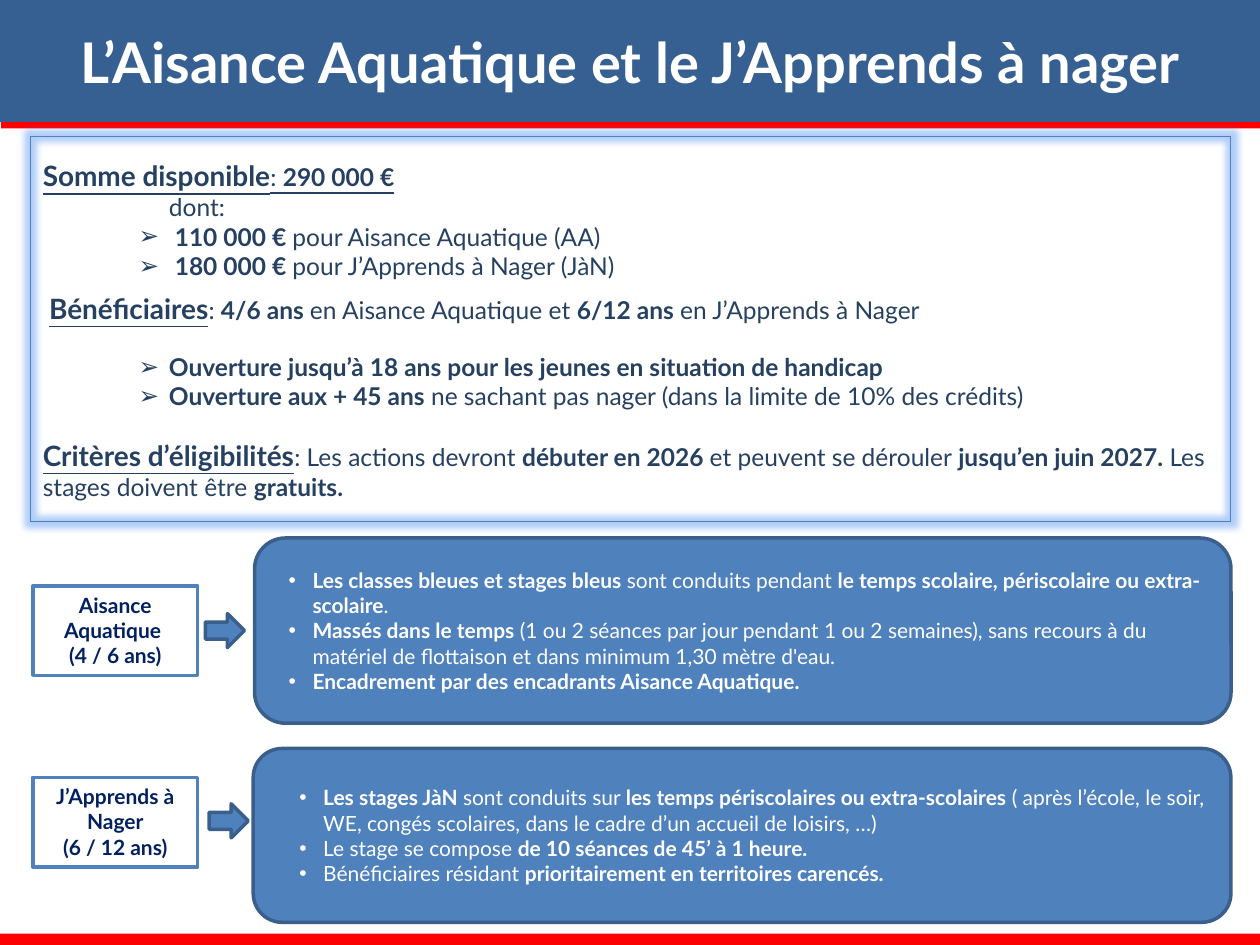
from lxml import etree
from pptx import Presentation
from pptx.dml.color import RGBColor
from pptx.enum.shapes import MSO_SHAPE
from pptx.enum.text import MSO_ANCHOR, MSO_AUTO_SIZE, PP_ALIGN
from pptx.oxml.ns import qn
from pptx.util import Inches, Pt

RECT, ROUND, ARROW = MSO_SHAPE.RECTANGLE, MSO_SHAPE.ROUNDED_RECTANGLE, MSO_SHAPE.RIGHT_ARROW
TOP, MIDDLE = MSO_ANCHOR.TOP, MSO_ANCHOR.MIDDLE
LEFT, CENTER = PP_ALIGN.LEFT, PP_ALIGN.CENTER
NO_FIT = MSO_AUTO_SIZE.NONE

FONT = "Lato"
WHITE, RED, BLUE, EDGE = "FFFFFF", "FF0000", "4F81BD", "3A5F8B"
BANNER, INK, NAVY, GLOW = "376092", "254061", "002060", "3A82EE"


def rgb(value):
    return RGBColor.from_string(value)


def add_xml(parent, tag, **attributes):
    return etree.SubElement(parent, qn(tag), **attributes)


class Deck:
    """Holds the style and the current slide."""

    def __init__(self):
        self.prs = Presentation()
        self.prs.slide_width, self.prs.slide_height = Inches(10), Inches(7.5)
        self.s = self.prs.slides.add_slide(self.prs.slide_layouts[1])

    def style(self, sp, fill=None, line=None, width=2):
        sp.shadow.inherit = False
        if fill:
            sp.fill.solid()
            sp.fill.fore_color.rgb = rgb(fill)
        else:
            sp.fill.background()
        if line:
            sp.line.color.rgb = rgb(line)
            sp.line.width = Pt(width)
        else:
            sp.line.fill.background()

    def shape(self, kind, x, y, w, h, fill, line=None):
        sp = self.s.shapes.add_shape(kind, Inches(x), Inches(y), Inches(w), Inches(h))
        self.style(sp, fill, line)
        return sp

    def placeholder(self, index, x, y, w, h):
        sp = self.s.placeholders[index]
        sp.left, sp.top, sp.width, sp.height = Inches(x), Inches(y), Inches(w), Inches(h)
        return sp

    def glow(self, sp, color, radius, alpha):
        effects = sp.element.spPr.find(qn("a:effectLst"))
        glow = add_xml(effects, "a:glow", rad=str(Pt(radius)))
        clr = add_xml(glow, "a:srgbClr", val=color)
        add_xml(clr, "a:alpha", val=str(alpha * 1000))

    def frame(self, sp, anchor=MIDDLE, top=0.05):
        tf = sp.text_frame
        tf.auto_size, tf.word_wrap, tf.vertical_anchor = NO_FIT, True, anchor
        tf.margin_left = tf.margin_right = Inches(0.1)
        tf.margin_top, tf.margin_bottom = Inches(top), Inches(0.05)
        return tf

    def paragraph(self, tf, text, size, color, head="", bullet=None, align=LEFT,
                  margin=0, hang=0, before=0, underline=False):
        """Add a paragraph; *stars* mark bold, head is a larger underlined start."""
        p = tf.paragraphs[0]
        if p.runs:
            p = tf.add_paragraph()
        pPr = p._p.get_or_add_pPr()
        pPr.set("marL", str(Inches(margin)))
        pPr.set("indent", str(Inches(-hang)))
        if bullet:
            add_xml(add_xml(pPr, "a:buClr"), "a:srgbClr", val=color)
            add_xml(pPr, "a:buFont", typeface="Arial")
            add_xml(pPr, "a:buChar", char=bullet)
        else:
            add_xml(pPr, "a:buNone")
        p.alignment, p.space_before = align, Pt(before)
        if head:
            self.run(p, head, size + 2, color, True, True)
        for i, part in enumerate(text.split("*")):
            if part:
                self.run(p, part, size, color, i % 2 == 1, underline)

    def run(self, p, text, size, color, bold, underline):
        r = p.add_run()
        r.text = text
        r.font.name, r.font.size, r.font.color.rgb = FONT, Pt(size), rgb(color)
        r.font.bold, r.font.underline = bold, underline

    def title(self, text):
        sp = self.placeholder(0, 0, 0, 10.01, 0.97)
        self.style(sp, BANNER)
        self.paragraph(self.frame(sp), f"*{text}*", 32, WHITE, align=CENTER)

    def summary(self, items):
        sp = self.placeholder(1, 0.24, 1.08, 9.53, 3.06)
        self.style(sp, line=BLUE, width=0)
        self.glow(sp, GLOW, 8, 40)
        # The glow lies over the red rule, so the box goes to the front
        sp.element.getparent().append(sp.element)
        tf = self.frame(sp, TOP, 0.18)
        for text, options in items:
            self.paragraph(tf, text, 14, INK, **options)

    def label(self, y, lines):
        tf = self.frame(self.shape(RECT, 0.26, y, 1.31, 0.71, WHITE, BLUE), TOP)
        for line in lines:
            self.paragraph(tf, f"*{line}*", 12, NAVY, align=CENTER)

    def arrow(self, x, y):
        self.shape(ARROW, x, y, 0.31, 0.27, BLUE, EDGE)

    def card(self, x, y, h, margin, items):
        tf = self.frame(self.shape(ROUND, x, y, 9.77 - x, h, BLUE, EDGE))
        for text in items:
            self.paragraph(tf, text, 12, WHITE, bullet="•", margin=margin, hang=0.19)


POINT = dict(bullet="➢", margin=1, hang=0.24)
GAP = 15.6

SUMMARY = [
    (": *290 000 €*", dict(head="Somme disponible", underline=True)),
    ("dont:", dict(margin=1)),
    ("* 110 000 € *pour Aisance Aquatique (AA)", POINT),
    ("* 180 000 € *pour J’Apprends à Nager (JàN)", POINT),
    (": *4/6 ans *en Aisance Aquatique et *6/12 ans *en J’Apprends à Nager",
     dict(head="Bénéficiaires", margin=0.05, before=6)),
    ("*Ouverture jusqu’à 18 ans pour les jeunes en situation de handicap*",
     dict(POINT, before=GAP)),
    ("*Ouverture aux + 45 ans *ne sachant pas nager (dans la limite de 10% des crédits)",
     POINT),
    (": Les actions devront *débuter en 2026 *et peuvent se dérouler "
     "*jusqu’en juin 2027. *Les stages doivent être *gratuits.*",
     dict(head="Critères d’éligibilités", before=GAP)),
]

# Label top and lines, arrow position, card (left, top, height, text margin), card items
PROGRAMMES = [
    (4.65, ["Aisance Aquatique ", "(4 / 6 ans)"], (1.63, 4.87), (2.02, 4.27, 1.47, 0.29), [
        "*Les classes bleues et stages bleus *sont conduits pendant "
        "*le temps scolaire, périscolaire ou extra-scolaire*.",
        "*Massés dans le temps *(1 ou 2 séances par jour pendant 1 ou 2 semaines), sans "
        "recours à du matériel de flottaison et dans minimum 1,30 mètre d'eau.",
        "*Encadrement par des encadrants Aisance Aquatique.*",
    ]),
    (6.17, ["J’Apprends à Nager", "(6 / 12 ans)"], (1.66, 6.38), (2.01, 5.94, 1.38, 0.39), [
        "*Les stages JàN *sont conduits sur *les temps périscolaires ou extra-scolaires *"
        "( après l’école, le soir, WE, congés scolaires, dans le cadre d’un accueil "
        "de loisirs, …)",
        "Le stage se compose *de 10 séances de 45’ à 1 heure.*",
        "Bénéficiaires résidant *prioritairement en territoires carencés.*",
    ]),
]


def main():
    deck = Deck()
    deck.title("L’Aisance Aquatique et le J’Apprends à nager")
    deck.shape(RECT, 0, 7.41, 10, 0.1, RED)
    deck.shape(RECT, 0.01, 0.97, 10, 0.05, RED)
    deck.summary(SUMMARY)
    for label_top, lines, arrow, card, items in PROGRAMMES:
        deck.card(*card, items)
        deck.label(label_top, lines)
        deck.arrow(*arrow)
    deck.prs.save("out.pptx")


if __name__ == "__main__":
    main()
